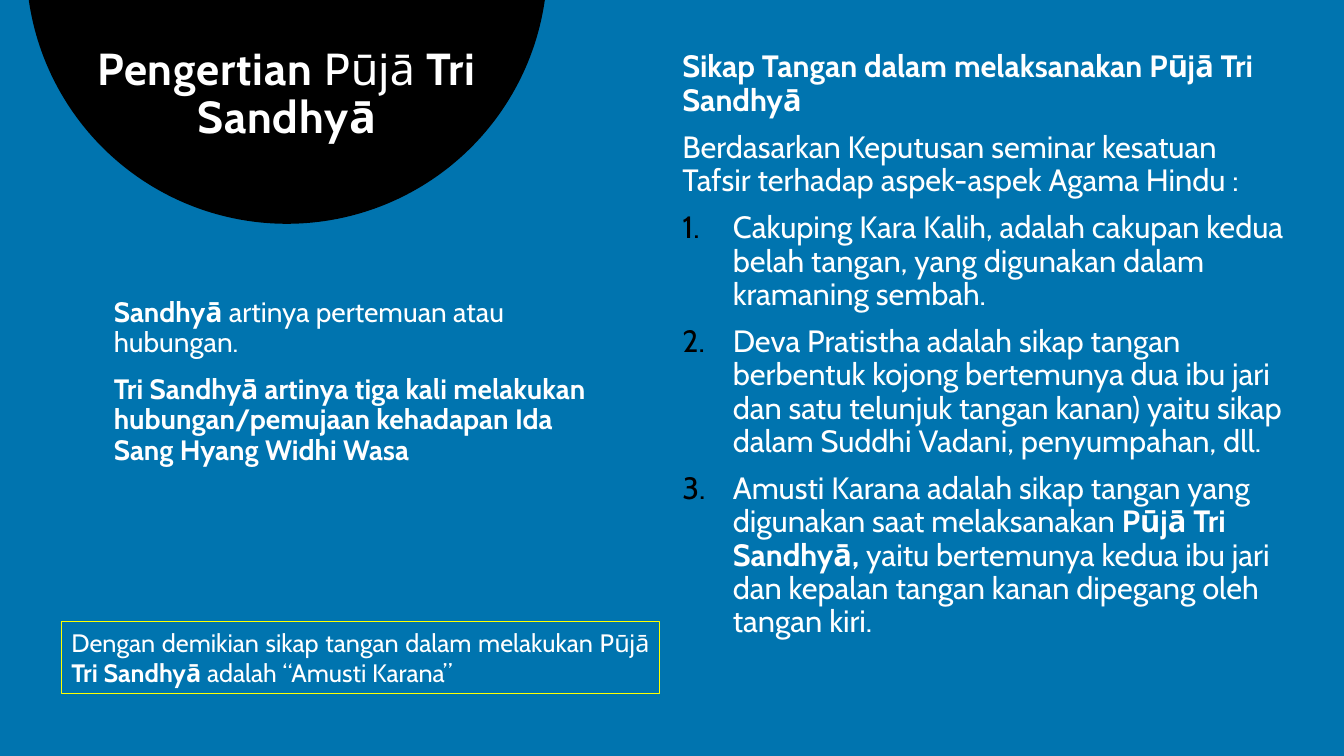
from lxml.etree import SubElement
from pptx import Presentation
from pptx.dml.color import RGBColor
from pptx.enum.shapes import MSO_SHAPE
from pptx.enum.text import MSO_ANCHOR, PP_ALIGN
from pptx.oxml.ns import qn
from pptx.util import Inches, Pt

BLUE = RGBColor(0x00, 0x74, 0xAF)
BLACK = RGBColor(0x00, 0x00, 0x00)
WHITE = RGBColor(0xFF, 0xFF, 0xFF)
YELLOW = RGBColor(0xFF, 0xFF, 0x00)
FONT = "Cabin"

# Each paragraph is a list of (text, bold) runs.
TITLE = [("Pengertian ", True), ("Pūjā", False), (" Tri Sandhyā", True)]
MEANINGS = [
    [("Sandhyā ", True), ("artinya pertemuan atau hubungan.", False)],
    [("Tri Sandhyā artinya tiga kali melakukan hubungan/pemujaan "
      "kehadapan Ida Sang Hyang Widhi Wasa", True)],
]
HAND_INTRO = [
    [("Sikap Tangan dalam melaksanakan Pūjā Tri Sandhyā", True)],
    [("Berdasarkan Keputusan seminar kesatuan Tafsir terhadap "
      "aspek-aspek Agama Hindu :", False)],
]
HAND_POSITIONS = [
    [("Cakuping Kara Kalih, adalah cakupan kedua belah tangan, yang "
      "digunakan dalam kramaning sembah.", False)],
    [("Deva Pratistha adalah sikap tangan berbentuk kojong bertemunya dua "
      "ibu jari dan satu telunjuk tangan kanan) yaitu sikap dalam Suddhi "
      "Vadani, penyumpahan, dll.", False)],
    [("Amusti Karana adalah sikap tangan yang digunakan saat melaksanakan ", False),
     ("Pūjā Tri Sandhyā, ", True),
     ("yaitu bertemunya kedua ibu jari dan kepalan tangan kanan dipegang "
      "oleh tangan kiri.", False)],
]
CONCLUSION = [
    ("Dengan demikian sikap tangan dalam melakukan Pūjā", False),
    (" Tri Sandhyā ", True),
    ("adalah “Amusti Karana”", False),
]


def add_text_frame(slide, left, top, width, height):
    frame = slide.shapes.add_textbox(
        Inches(left), Inches(top), Inches(width), Inches(height)).text_frame
    frame.word_wrap = True
    return frame


def write_paragraph(paragraph, runs, size, align=PP_ALIGN.LEFT,
                    line_spacing=0.9, space_before=0):
    paragraph.alignment = align
    paragraph.line_spacing = line_spacing
    paragraph.space_before = Pt(space_before)
    paragraph.font.name = FONT
    paragraph.font.size = Pt(size)
    paragraph.font.color.rgb = WHITE
    for text, bold in runs:
        run = paragraph.add_run()
        run.text = text
        run.font.bold = bold


def write_paragraphs(frame, paragraphs, size, space_before):
    for index, runs in enumerate(paragraphs):
        paragraph = frame.add_paragraph() if index else frame.paragraphs[0]
        write_paragraph(paragraph, runs, size, space_before=space_before)


def number_paragraph(paragraph):
    """Give the paragraph a hanging, black automatic number."""
    properties = paragraph._p.get_or_add_pPr()
    properties.set("marL", str(Inches(0.5)))
    properties.set("indent", str(-Inches(0.5)))
    color = SubElement(properties, qn("a:buClr"))
    SubElement(color, qn("a:srgbClr"), val=str(BLACK))
    SubElement(properties, qn("a:buAutoNum"), type="arabicPeriod")
    properties.append(properties.find(qn("a:defRPr")))


def add_title(slide, left, top, width, height):
    """Place the title on a black disc that hangs from the slide's top edge."""
    diameter = 5.17
    disc = slide.shapes.add_shape(
        MSO_SHAPE.OVAL, Inches(left + (width - diameter) / 2),
        Inches(top - 2.95), Inches(diameter), Inches(diameter))
    disc.shadow.inherit = False
    disc.fill.solid()
    disc.fill.fore_color.rgb = BLACK
    disc.line.fill.background()

    frame = add_text_frame(slide, left, top, width, height)
    frame.margin_left = frame.margin_right = Inches(0.16)
    frame.margin_top = Inches(0.46)
    title = frame.paragraphs[0]
    write_paragraph(title, TITLE, 32, PP_ALIGN.CENTER)
    for run in title.runs:
        run.font._element.set("spc", "60")


def add_meanings(slide, left, top, width, height):
    frame = add_text_frame(slide, left, top, width, height)
    write_paragraphs(frame, MEANINGS, 20, 12)


def add_hand_positions(slide, left, top, width, height):
    frame = add_text_frame(slide, left, top, width, height)
    write_paragraphs(frame, HAND_INTRO + HAND_POSITIONS, 22, 10)
    for paragraph in frame.paragraphs[len(HAND_INTRO):]:
        number_paragraph(paragraph)


def add_conclusion(slide, left, top, width, height):
    box = slide.shapes.add_shape(
        MSO_SHAPE.RECTANGLE, Inches(left), Inches(top),
        Inches(width), Inches(height))
    box.shadow.inherit = False
    box.fill.background()
    box.line.color.rgb = YELLOW
    box.line.width = Pt(0.75)
    box.text_frame.word_wrap = True
    box.text_frame.vertical_anchor = MSO_ANCHOR.TOP
    write_paragraph(box.text_frame.paragraphs[0], CONCLUSION, 18,
                    PP_ALIGN.JUSTIFY, line_spacing=1.0)


def main():
    presentation = Presentation()
    presentation.slide_width = Inches(13.33)
    presentation.slide_height = Inches(7.5)
    slide = presentation.slides.add_slide(presentation.slide_layouts[6])
    slide.background.fill.solid()
    slide.background.fill.fore_color.rgb = BLUE

    add_title(slide, 0.61, 0, 4.47, 1.48)
    add_meanings(slide, 1.03, 2.91, 5.11, 1.78)
    add_hand_positions(slide, 6.67, 0.46, 6.2, 6.33)
    add_conclusion(slide, 0.61, 6.17, 5.93, 0.71)
    presentation.save("out.pptx")


if __name__ == "__main__":
    main()
